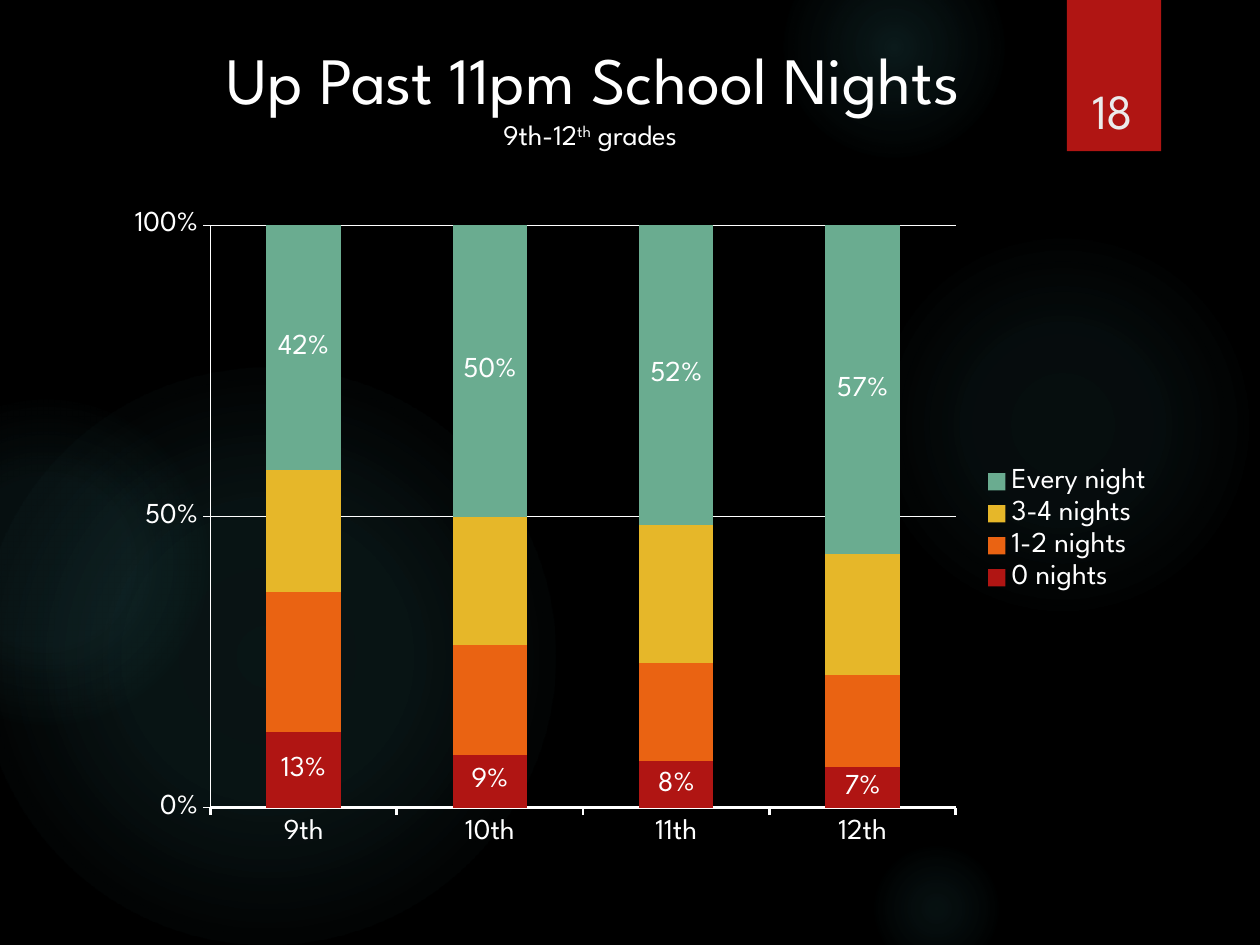
import pptx
import pptx.chart.data
import pptx.dml.color
import pptx.enum.chart
import pptx.enum.shapes
import pptx.enum.text
import pptx.oxml
import pptx.oxml.ns
import pptx.util

Cm, Pt = pptx.util.Cm, pptx.util.Pt
FONT = "League Spartan"
HUES = {"back": "000000", "text": "FFFFFF", "page": "EBEBEB", "glow": "50B9C1",
        "red": "B01513", "orange": "EA6312", "gold": "E6B729", "green": "6AAC90"}
GLOWS = [
    (17.5, 4.65, 7.82, ((0, 7), (36, 6), (69, 0))),
    (15.8, -1.27, 4.45, ((0, 14), (36, 7), (73, 0))),
    (17.5, 16.94, 2.74, ((0, 9), (36, 5), (66, 0))),
    (-0.43, 7.42, 11.63, ((0, 11), (36, 10), (75, 0))),
    (-2.34, 8.05, 6.55, ((0, 8), (36, 8), (72, 0))),
]
GRADES = ["9th", "10th", "11th", "12th"]
NIGHTS = [
    ("0 nights", (0.13, 0.09, 0.08, 0.07), "red", True),
    ("1-2 nights", (0.24, 0.19, 0.17, 0.16), "orange", False),
    ("3-4 nights", (0.21, 0.22, 0.24, 0.21), "gold", False),
    ("Every night", (0.42, 0.5, 0.52, 0.57), "green", True),
]


def hue(name):
    return pptx.dml.color.RGBColor.from_string(HUES[name])


class Deck:
    """Holds the style and the current slide, with a method per element."""

    def __init__(self):
        self.prs = pptx.Presentation()
        self.prs.slide_width, self.prs.slide_height = Cm(25.4), Cm(19.05)
        self.slide = self.prs.slides.add_slide(self.prs.slide_layouts[6])
        fill = self.slide.background.fill
        fill.solid()
        fill.fore_color.rgb = hue("back")

    def shape(self, kind, box, color):
        item = self.slide.shapes.add_shape(kind, *map(Cm, box))
        item.shadow.inherit = False
        item.fill.solid()
        item.fill.fore_color.rgb = hue(color)
        item.line.fill.background()
        return item

    def glow(self, left, top, size, stops):
        oval = pptx.enum.shapes.MSO_SHAPE.OVAL
        item = self.shape(oval, (left, top, size, size), "glow")
        marks = "".join(
            f'<a:gs pos="{pos * 1000}"><a:srgbClr val="{HUES["glow"]}">'
            f'<a:alpha val="{alpha * 1000}"/></a:srgbClr></a:gs>'
            for pos, alpha in stops)
        grad = pptx.oxml.parse_xml(
            f'<a:gradFill {pptx.oxml.ns.nsdecls("a")} rotWithShape="1">'
            f'<a:gsLst>{marks}</a:gsLst><a:path path="circle">'
            '<a:fillToRect l="50000" t="50000" r="50000" b="50000"/>'
            '</a:path></a:gradFill>')
        props = item.element.spPr
        props.replace(props.find(pptx.oxml.ns.qn("a:solidFill")), grad)

    def text(self, box, lines, color="text"):
        frame = self.slide.shapes.add_textbox(*map(Cm, box)).text_frame
        frame.word_wrap = True
        frame.vertical_anchor = pptx.enum.text.MSO_ANCHOR.BOTTOM
        para = frame.paragraphs[0]
        para.alignment = pptx.enum.text.PP_ALIGN.CENTER
        for row, runs in enumerate(lines):
            if row:
                para.add_line_break()
            for words, size, lift in runs:
                run = para.add_run()
                run.text = words
                self.style(run.font, size, color)
                if lift:
                    run.font._element.set("baseline", str(lift * 1000))

    def style(self, font, size, color="text"):
        font.name, font.size = FONT, Pt(size)
        font.color.rgb = hue(color)

    def line(self, form, width):
        form.line.color.rgb = hue("text")
        form.line.width = Pt(width)

    def chart(self, box, cats, rows):
        enum = pptx.enum.chart
        data = pptx.chart.data.CategoryChartData(number_format="0%")
        data.categories = cats
        for name, vals, *_ in rows:
            data.add_series(name, vals)
        chart = self.slide.shapes.add_chart(
            enum.XL_CHART_TYPE.COLUMN_STACKED_100, *map(Cm, box), data).chart
        self.style(chart.font, 16.5)
        chart.has_title = False
        chart.has_legend = True
        chart.legend.position = enum.XL_LEGEND_POSITION.RIGHT
        chart.legend.include_in_layout = False
        plot = chart.plots[0]
        plot.gap_width, plot.overlap, plot.vary_by_categories = 150, 100, False
        for series, (_, _, color, shown) in zip(plot.series, rows):
            series.format.fill.solid()
            series.format.fill.fore_color.rgb = hue(color)
            if shown:
                labels = series.data_labels
                labels.show_value = True
                labels.number_format = "0%"
                labels.number_format_is_linked = False
                self.style(labels.font, 16.5)
        for axis, width in ((chart.category_axis, 1.5), (chart.value_axis, 0.75)):
            axis.major_tick_mark = enum.XL_TICK_MARK.OUTSIDE
            self.line(axis.format, width)
        scale = chart.value_axis
        scale.minimum_scale, scale.maximum_scale, scale.major_unit = 0, 1, 0.5
        scale.tick_labels.number_format = "0%"
        scale.tick_labels.number_format_is_linked = False
        self.line(scale.major_gridlines.format, 0.75)
        self.place(chart, x=0.09, y=0.04, w=0.71, h=0.88)

    def place(self, chart, **parts):
        area = chart._chartSpace.chart.plotArea
        for old in area.findall(pptx.oxml.ns.qn("c:layout")):
            area.remove(old)
        marks = "".join(f'<c:{key}Mode val="edge"/>' for key in "xy")
        marks += "".join(f'<c:{key} val="{val}"/>' for key, val in parts.items())
        area.insert(0, pptx.oxml.parse_xml(
            f'<c:layout {pptx.oxml.ns.nsdecls("c")}><c:manualLayout>'
            f'<c:layoutTarget val="inner"/>{marks}</c:manualLayout></c:layout>'))


def main():
    deck = Deck()
    for glow in GLOWS:
        deck.glow(*glow)
    deck.shape(pptx.enum.shapes.MSO_SHAPE.RECTANGLE, (21.51, 0, 2.4, 3.05)[:2] + (1.9, 3.05), "red")
    deck.text((2.54, 0.64, 18.85, 2.54), [
        [("Up Past 11pm School Nights", 37.8, 0)],
        [("9th-12", 16.2, 0), ("th", 16.2, 30), (" grades ", 16.2, 0)]])
    deck.chart((2.34, 4.01, 21.16, 13.34), GRADES, NIGHTS)
    deck.text((21.56, 0.81, 1.75, 2.13), [[("18", 28, 0)]], "page")
    deck.prs.save("out.pptx")


if __name__ == "__main__":
    main()
